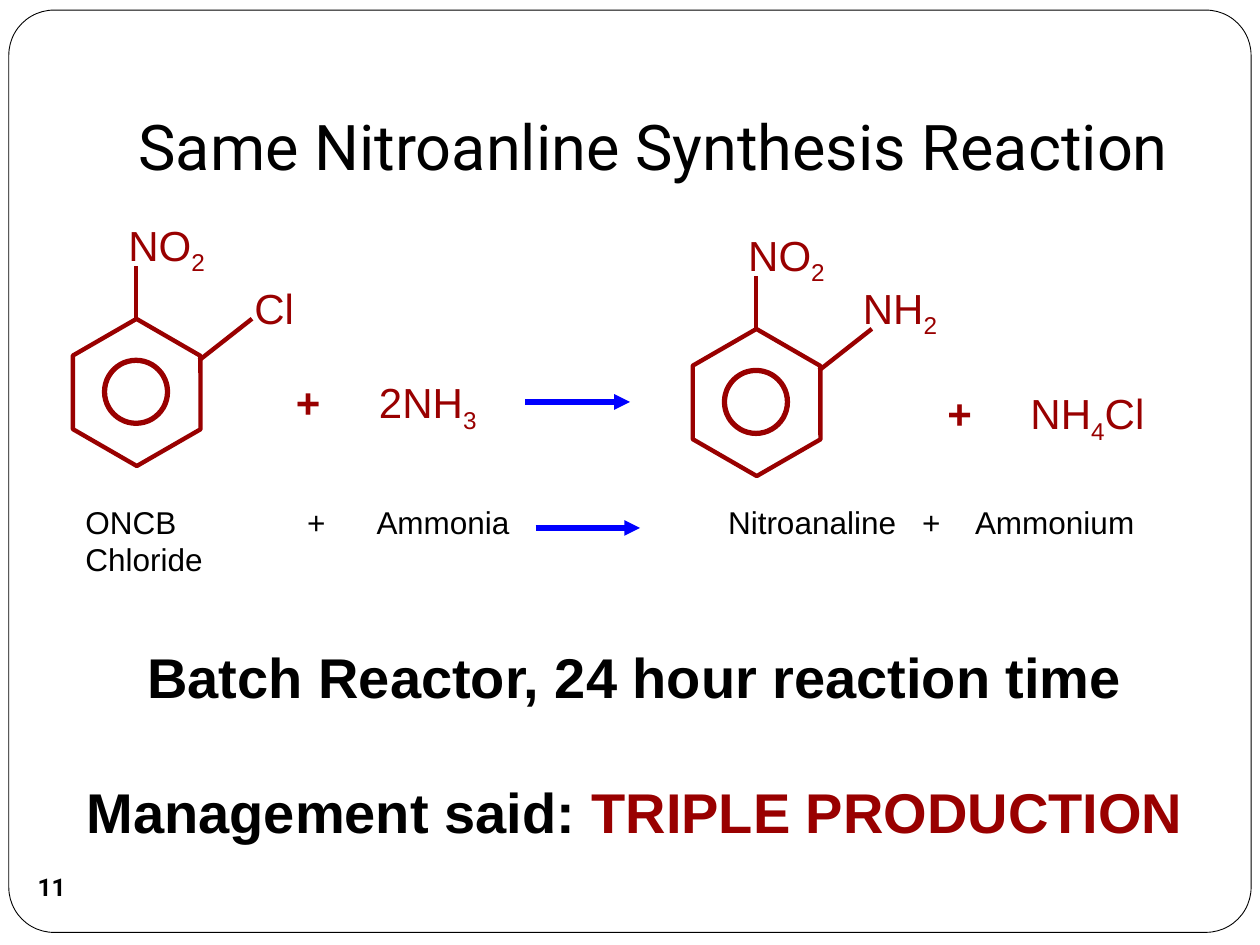
from lxml import etree
from pptx import Presentation, util as u
from pptx.dml.color import RGBColor
from pptx.enum import shapes, text
from pptx.oxml.ns import qn

Inches, Pt = u.Inches, u.Pt
BLACK, WHITE, RED, BLUE = "000000", "FFFFFF", "990000", "0000FF"
PLAIN, BOLD, SUB = {}, {"bold": True}, {"sub": True}


def rgb(value):
    return RGBColor.from_string(value)


class ReactionSlide:
    """Holds the style and the current slide."""
    font = "Arial"

    def __init__(self, presentation):
        self.slide = presentation.slides.add_slide(presentation.slide_layouts[5])

    def add_runs(self, paragraph, runs, size, color=BLACK, font=None):
        for words, style in runs:
            run = paragraph.add_run()
            run.text = words
            run.font.name = font or self.font
            run.font.size = Pt(size)
            run.font.bold = style.get("bold", False)
            run.font.color.rgb = rgb(style.get("color", color))
            if style.get("sub"):
                run.font._element.set("baseline", "-25000")

    def set_frame(self, frame, anchor, insets, wrap=True):
        frame.word_wrap = wrap
        frame.auto_size = text.MSO_AUTO_SIZE.NONE
        frame.vertical_anchor = anchor
        (frame.margin_left, frame.margin_top,
         frame.margin_right, frame.margin_bottom) = [Inches(i) for i in insets]

    def title(self, words, left, top, width, height):
        title = self.slide.shapes.title
        title.left, title.top = Inches(left), Inches(top)
        title.width, title.height = Inches(width), Inches(height)
        self.set_frame(title.text_frame, text.MSO_ANCHOR.BOTTOM, (0.1, 0.05, 0.1, 0.1))
        paragraph = title.text_frame.paragraphs[0]
        paragraph.alignment = text.PP_ALIGN.LEFT
        self.add_runs(paragraph, [(words, PLAIN)], 36, font="Roboto")

    def shape(self, kind, left, top, width, height, line=None, weight=1, fill=None):
        shape = self.slide.shapes.add_shape(
            kind, Inches(left), Inches(top), Inches(width), Inches(height))
        shape.shadow.inherit = False
        if fill:
            shape.fill.solid()
            shape.fill.fore_color.rgb = rgb(fill)
        else:
            shape.fill.background()
        if line:
            shape.line.color.rgb = rgb(line)
            shape.line.width = Pt(weight)
        else:
            shape.line.fill.background()
        return shape

    def line(self, x1, y1, x2, y2, color=RED, weight=2.5, arrow=False):
        line = self.slide.shapes.add_connector(
            shapes.MSO_CONNECTOR.STRAIGHT, Inches(x1), Inches(y1), Inches(x2), Inches(y2))
        line.line.color.rgb = rgb(color)
        line.line.width = Pt(weight)
        if arrow:
            etree.SubElement(line.line._get_or_add_ln(), qn("a:tailEnd"), type="triangle")
        etree.SubElement(line._element.spPr, qn("a:effectLst"))

    def text_box(self, left, top, width, height, paragraphs, size, color=BLACK,
                 align=text.PP_ALIGN.LEFT, gap=0, tabs=()):
        box = self.slide.shapes.add_textbox(
            Inches(left), Inches(top), Inches(width), Inches(height))
        frame = box.text_frame
        self.set_frame(frame, text.MSO_ANCHOR.TOP, (0.1, 0.05, 0, 0.05))
        for index, runs in enumerate(paragraphs):
            paragraph = frame.add_paragraph() if index else frame.paragraphs[0]
            paragraph.alignment = align
            paragraph.space_before = Pt(gap if index else 0)
            if tabs:
                stops = etree.SubElement(paragraph._p.get_or_add_pPr(), qn("a:tabLst"))
                for stop in tabs:
                    etree.SubElement(stops, qn("a:tab"), pos=str(Inches(stop)), algn="l")
            self.add_runs(paragraph, runs, size, color)

    def formula(self, left, top, width, runs, tabs=()):
        self.text_box(left, top, width, 0.51, [runs], 24, RED, tabs=tabs)

    def benzene(self, left, top):
        """Ring with a bond up and a bond to the upper right."""
        hexagon = self.shape(shapes.MSO_SHAPE.HEXAGON, left, top, 1.17, 1.01, RED, 2.5)
        hexagon.adjustments[0], hexagon.adjustments[1] = 0.289, 1.155
        hexagon.rotation = 30
        self.shape(shapes.MSO_SHAPE.OVAL, left + 0.33, top + 0.25, 0.5, 0.5, RED, 3)
        self.line(left + 0.58, top - 0.08, left + 0.58, top - 0.5)
        self.line(left + 1.08, top + 0.25, left + 1.5, top - 0.08)
        self.formula(left + 0.42, top - 0.92, 0.83, [("NO", PLAIN), ("2", SUB)])

    def reaction_arrow(self, left, y):
        self.line(left, y, left + 0.83, y, BLUE, 3, arrow=True)

    def page_number(self, number):
        badge = self.shape(shapes.MSO_SHAPE.OVAL, 0.16, 6.79, 0.5, 0.5)
        self.set_frame(badge.text_frame, text.MSO_ANCHOR.MIDDLE, (0, 0, 0, 0), wrap=False)
        paragraph = badge.text_frame.paragraphs[0]
        paragraph.alignment = text.PP_ALIGN.CENTER
        self.add_runs(paragraph, [(number, BOLD)], 14, font="Roboto")


def main():
    presentation = Presentation()
    presentation.slide_width, presentation.slide_height = Inches(10), Inches(7.5)
    page = ReactionSlide(presentation)

    # Border behind the title
    border = page.shape(shapes.MSO_SHAPE.ROUNDED_RECTANGLE,
                        0.07, 0.08, 9.86, 7.32, BLACK, 0.5, WHITE)
    border.adjustments[0] = 0.049
    page.slide.shapes.title._element.addprevious(border._element)
    page.title("Same Nitroanline Synthesis Reaction", 1, 0.3, 8.5, 1.25)
    page.page_number("11")

    # Reactants
    page.benzene(0.5, 2.61)
    page.formula(1.92, 2.19, 0.52, [("Cl", PLAIN)])
    page.formula(2.25, 2.94, 1.66, [("+\t", BOLD), ("2NH", PLAIN), ("3", SUB)], tabs=[0.66])
    page.reaction_arrow(4.17, 3.19)

    # Products
    page.benzene(5.42, 2.69)
    page.formula(6.75, 2.19, 0.81, [("NH", PLAIN), ("2", SUB)])
    page.formula(7.42, 3.03, 1.79,
                 [("+\t", BOLD), ("NH", PLAIN), ("4", SUB), ("Cl", PLAIN)], tabs=[0.66])

    # Names of the compounds
    names = "ONCB\t+\tAmmonia\tNitroanaline\t+\tAmmonium Chloride"
    page.text_box(0.58, 3.94, 8.91, 0.71, [[(names, PLAIN)]], 18,
                  tabs=[1.76, 2.31, 5.1, 6.64, 7.06])
    page.reaction_arrow(4.25, 4.19)

    # Conclusion
    page.text_box(0.33, 5.05, 9.32, 1.72, [
        [("Batch Reactor, 24 hour reaction time", BOLD)],
        [("Management said: ", BOLD), ("TRIPLE PRODUCTION", {"bold": True, "color": RED})],
    ], 32, align=text.PP_ALIGN.CENTER, gap=39)

    presentation.save("out.pptx")


if __name__ == "__main__":
    main()
